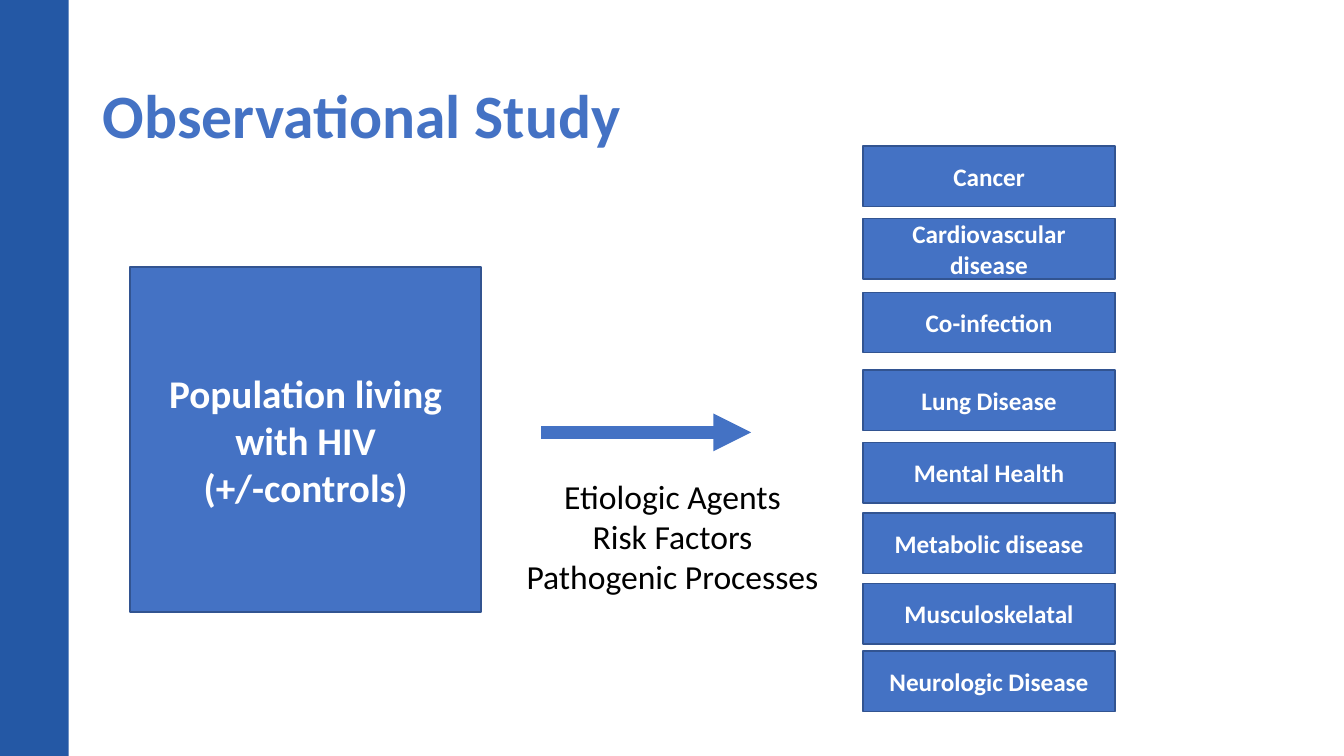
from pptx import Presentation
from pptx.dml.color import RGBColor as RGB
from pptx.enum.shapes import MSO_CONNECTOR as CONN, MSO_SHAPE as SHAPE
from pptx.enum.text import MSO_ANCHOR as ANCHOR, PP_ALIGN as ALIGN
from pptx.util import Emu, Pt
from pptx.oxml.ns import qn
from lxml.etree import SubElement as sub

PX = 9144  # 100 px to the inch
FONT = "Calibri"
HEX = {"band": "2458A5", "blue": "4472C4", "edge": "325491",
       "white": "FFFFFF", "black": "000000"}

# Outcome boxes: top within the column, label
GOALS = [(0, "Cancer"), (72, "Cardiovascular disease"), (145, "Co-infection"),
         (222, "Lung Disease"), (294, "Mental Health"),
         (364, "Metabolic disease"), (434, "Musculoskelatal"),
         (501, "Neurologic Disease")]


def px(*nums):
    return [Emu(n * PX) for n in nums]


def tint(name):
    return RGB.from_string(HEX[name])


def write(shape, text, size, color, bold=False, align=ALIGN.CENTER,
          anchor=ANCHOR.MIDDLE, wrap=True):
    frame = shape.text_frame
    frame.text = text
    frame.word_wrap = wrap
    frame.vertical_anchor = anchor
    for para in frame.paragraphs:
        para.alignment = align
        for run in para.runs:
            font = run.font
            font.name, font.size, font.bold = FONT, Pt(size), bold
            font.color.rgb = tint(color)


def block(slide, box, fill, edge=None):
    shape = slide.shapes.add_shape(SHAPE.RECTANGLE, *px(*box))
    shape.shadow.inherit = False
    shape.fill.solid()
    shape.fill.fore_color.rgb = tint(fill)
    if edge:
        shape.line.color.rgb = tint(edge)
        shape.line.width = Pt(1)
    else:
        shape.line.fill.background()
    return shape


def label(slide, box, text, size, color, **opts):
    write(slide.shapes.add_textbox(*px(*box)), text, size, color, **opts)


def card(slide, box, text, size):
    write(block(slide, box, "blue", "edge"), text, size, "white", bold=True)


def link(slide, box):
    """Arrow along the top of the box, with the causes below it."""
    x, y, w, h = box
    line = slide.shapes.add_connector(
        CONN.STRAIGHT, *px(x + 26, y, x + 234, y))
    line.line.color.rgb = tint("blue")
    line.line.width = Pt(9)
    props = line.line._get_or_add_ln()
    sub(props, qn("a:tailEnd"), type="triangle")
    sub(props.getparent(), qn("a:effectLst"))
    label(slide, (x, y + 38, w, h - 38),
          "Etiologic Agents\nRisk Factors\nPathogenic Processes",
          24, "black", anchor=ANCHOR.TOP, wrap=False)


def column(slide, box):
    x, y, w, h = box
    high = h - GOALS[-1][0]
    for top, text in GOALS:
        card(slide, (x, y + top, w, high), text, 18)


def main():
    deck = Presentation()
    deck.slide_width, deck.slide_height = px(1333, 750)
    slide = deck.slides.add_slide(deck.slide_layouts[6])
    # Side band and title
    block(slide, (0, 0, 68, 750), "band")
    label(slide, (92, 40, 1150, 145), "Observational Study", 44, "blue",
          bold=True, align=ALIGN.LEFT)
    # Population, causes, outcomes
    card(slide, (129, 265, 348, 342),
         "Population living with HIV\n(+/-controls)", 28)
    link(slide, (511, 429, 312, 169))
    column(slide, (856, 145, 250, 561))
    deck.save("out.pptx")


if __name__ == "__main__":
    main()
